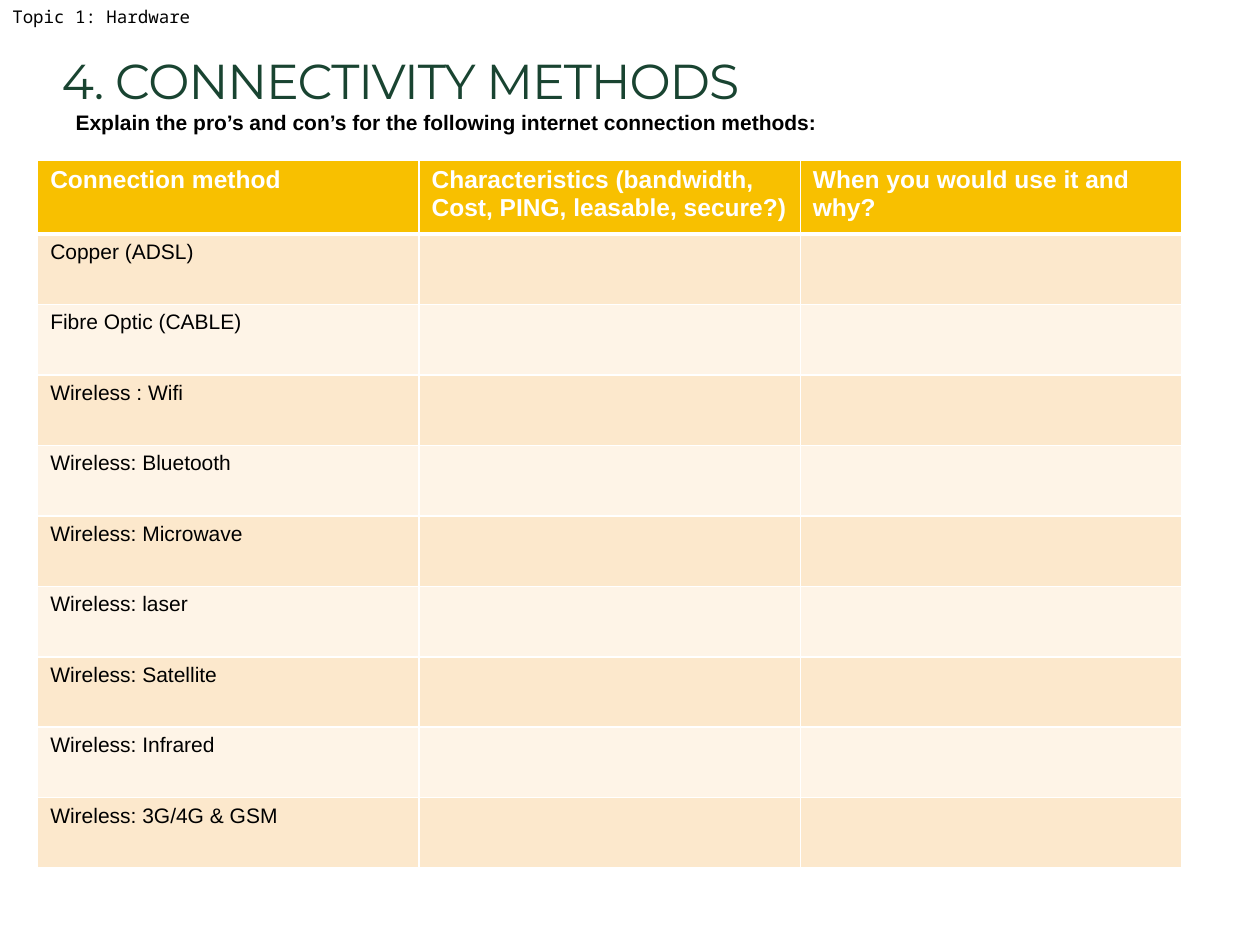
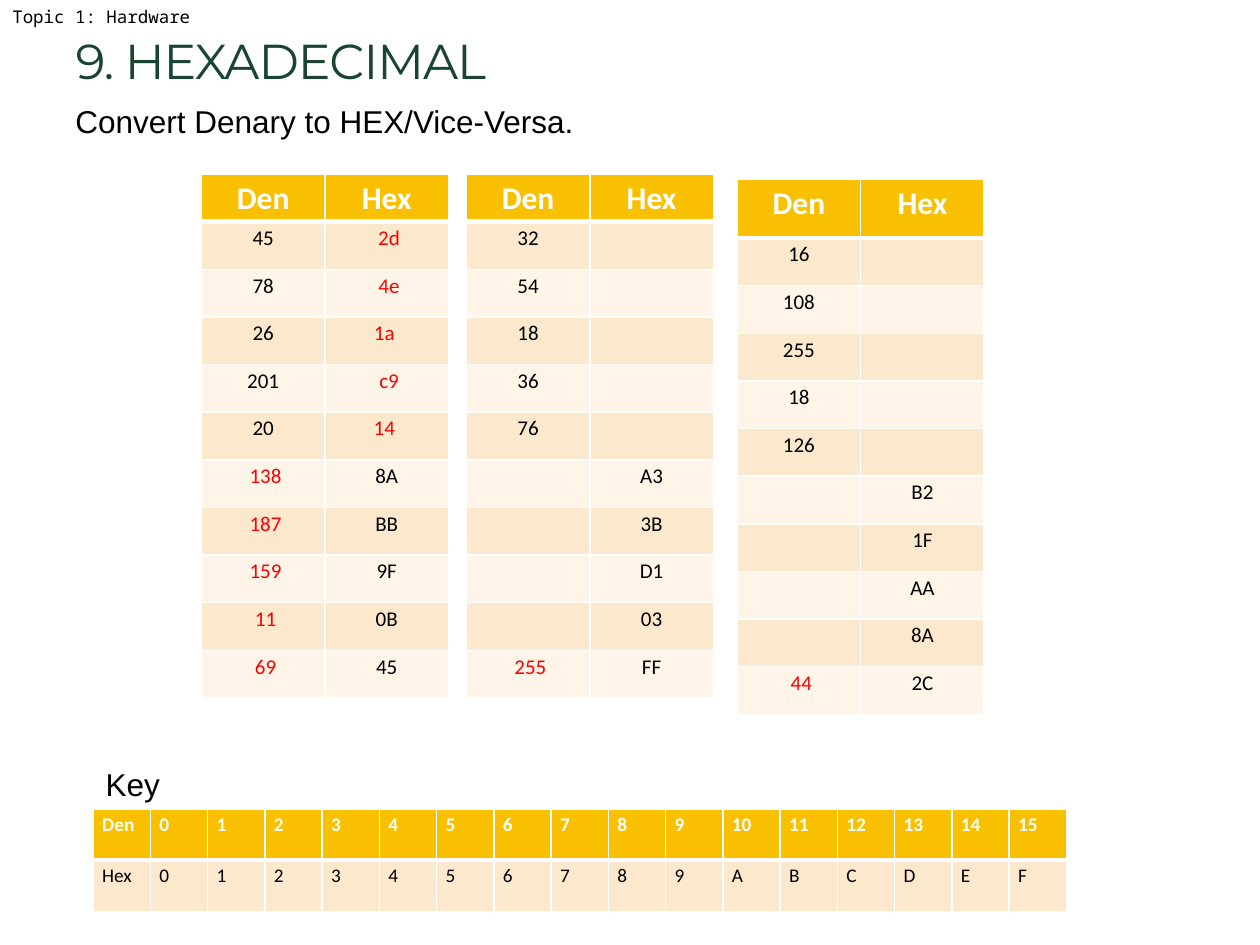
from dataclasses import dataclass

from lxml import etree
from pptx import Presentation
from pptx.dml.color import RGBColor
from pptx.enum import text
from pptx.oxml.ns import qn
from pptx.util import Cm, Pt


@dataclass(frozen=True)
class Theme:
    green: str = "194431"
    gold: str = "F8C000"
    bands: tuple = ("FCE8CC", "FEF4E7")
    white: str = "FFFFFF"
    black: str = "000000"
    red: str = "FF0000"
    title_font: str = "Montserrat"
    body_font: str = "Arial"
    table_font: str = "Calibri"
    header_font: str = "Noto Sans Mono"
    title_size: int = 28
    label_size: int = 18
    body_size: int = 12
    header_size: int = 10


@dataclass(frozen=True)
class TableLook:
    font: str
    head_size: int
    cell_size: int
    align: text.PP_ALIGN = text.PP_ALIGN.LEFT
    compact: bool = True


THEME = Theme()
METHOD_LOOK = TableLook(THEME.body_font, 14, THEME.body_size, compact=False)
CONVERSION_LOOK = TableLook(THEME.table_font, THEME.label_size, THEME.body_size, text.PP_ALIGN.CENTER)
KEY_LOOK = TableLook(THEME.table_font, 11, 11)

METHOD_HEADINGS = (
    "Connection method",
    "Characteristics (bandwidth, Cost, PING, leasable, secure?)",
    "When you would use it and why?",
)
METHODS = (
    "Copper (ADSL)",
    "Fibre Optic (CABLE)",
    "Wireless : Wifi",
    "Wireless: Bluetooth",
    "Wireless: Microwave",
    "Wireless: laser",
    "Wireless: Satellite",
    "Wireless: Infrared",
    "Wireless: 3G/4G & GSM",
)
CONVERSIONS = (
    (4.06, 3.51, 0.96, (
        ("45", " 2d"), ("78", " 4e"), ("26", "1a "), ("201", " c9"), ("20", "14 "),
        (" 138", "8A"), (" 187", "BB"), (" 159", "9F"), (" 11", "0B"), (" 69", "45"),
    )),
    (9.4, 3.51, 0.96, (
        ("32", ""), ("54", ""), ("18", ""), ("36", ""), ("76", ""),
        ("", "A3"), ("", "3B"), ("", "D1"), ("", "03"), (" 255", "FF"),
    )),
    (14.86, 3.61, 1.19, (
        ("16", ""), ("108", ""), ("255", ""), ("18", ""), ("126", ""),
        ("", "B2"), ("", "1F"), ("", "AA"), ("", "8A"), (" 44", "2C"),
    )),
)


def style_text(para, font, size, color, bold=False):
    for span in para.runs:
        span.font.name = font
        span.font.size = Pt(size)
        span.font.bold = bold
        span.font.color.rgb = RGBColor.from_string(color)


def place(box, left, top, width, height):
    box.left, box.top, box.width, box.height = map(Cm, (left, top, width, height))


def add_title(page, words, left, top):
    box = page.shapes.title
    place(box, left, top, 16.08, 3.4)
    frame = box.text_frame
    frame.text = words
    frame.auto_size = text.MSO_AUTO_SIZE.NONE
    frame.vertical_anchor = text.MSO_ANCHOR.BOTTOM
    para = frame.paragraphs[0]
    para.alignment = text.PP_ALIGN.LEFT
    style_text(para, THEME.title_font, THEME.title_size, THEME.green)
    for span in para.runs:
        span.font._element.set("spc", "-60")


def add_instruction(page, words):
    box = page.placeholders[1]
    place(box, 1.27, 2.08, 22.43, 12.14)
    frame = box.text_frame
    frame.text = words
    frame.auto_size = text.MSO_AUTO_SIZE.NONE
    para = frame.paragraphs[0]
    properties = para._p.get_or_add_pPr()
    properties.set("marL", "0")
    properties.set("indent", "0")
    etree.SubElement(properties, qn("a:buNone"))
    para.space_before = Pt(0)
    para.space_after = Pt(6)
    style_text(para, THEME.body_font, THEME.body_size, THEME.black, bold=True)


def add_label(page, words, left, top, width, height, font=THEME.body_font, size=THEME.label_size):
    box = page.shapes.add_textbox(Cm(left), Cm(top), Cm(width), Cm(height))
    frame = box.text_frame
    frame.text = words
    frame.word_wrap = False
    frame.auto_size = text.MSO_AUTO_SIZE.SHAPE_TO_FIT_TEXT
    style_text(frame.paragraphs[0], font, size, THEME.black)
    return box


def add_master_header(deck, page):
    box = add_label(page, "Topic 1: Hardware", 0, 0, 4.14, 0.69, THEME.header_font, THEME.header_size)
    deck.slide_master.shapes.element.append(box.element)


def set_borders(cell, row):
    widths = {"L": 1, "R": 1, "T": 3 if row == 1 else 1, "B": 3 if row == 0 else 1}
    properties = cell._tc.get_or_add_tcPr()
    for index, (side, width) in enumerate(widths.items()):
        line = etree.Element(qn(f"a:ln{side}"), w=str(Pt(width)))
        fill = etree.SubElement(line, qn("a:solidFill"))
        etree.SubElement(fill, qn("a:srgbClr"), val=THEME.white)
        properties.insert(index, line)


def fill_cell(cell, words, row, look):
    is_head = row == 0
    is_answer = words != words.strip()
    cell.fill.solid()
    cell.fill.fore_color.rgb = RGBColor.from_string(THEME.gold if is_head else THEME.bands[(row - 1) % 2])
    set_borders(cell, row)
    cell.text_frame.text = words
    para = cell.text_frame.paragraphs[0]
    para.alignment = look.align
    if look.compact:
        cell.margin_left = cell.margin_right = Cm(0.18)
        cell.margin_top = cell.margin_bottom = 0
        para.line_spacing = 1.15
    color = THEME.white if is_head else THEME.red if is_answer else THEME.black
    style_text(para, look.font, look.head_size if is_head else look.cell_size, color, is_head)


def add_grid(page, rows, left, top, width, head_height, row_height, look):
    heights = [head_height] + [row_height] * (len(rows) - 1)
    column_count = len(rows[0])
    grid = page.shapes.add_table(
        len(rows), column_count, Cm(left), Cm(top), Cm(width), Cm(sum(heights))
    ).table
    grid.first_row = grid.horz_banding = False
    for column in grid.columns:
        column.width = Cm(width / column_count)
    for row, (values, height) in enumerate(zip(rows, heights)):
        grid.rows[row].height = Cm(height)
        for column, words in enumerate(values):
            fill_cell(grid.cell(row, column), words, row, look)


def add_connectivity_page(deck):
    page = deck.slides.add_slide(deck.slide_layouts.get_by_name("Title and Content"))
    add_title(page, "4. CONNECTIVITY METHODS", 0.99, -1.07)
    add_instruction(page, "Explain the pro’s and con’s for the following internet connection methods:")
    rows = [METHOD_HEADINGS] + [(method, "", "") for method in METHODS]
    add_grid(page, rows, 0.76, 3.23, 23.06, 1.49, 1.42, METHOD_LOOK)
    return page


def add_hexadecimal_page(deck):
    page = deck.slides.add_slide(deck.slide_layouts.get_by_name("Title Only"))
    add_title(page, "9. HEXADECIMAL", 1.27, -1.47)
    add_label(page, "Convert Denary to HEX/Vice-Versa.", 1.27, 1.93, 10.67, 1.02)
    for left, top, head_height, pairs in CONVERSIONS:
        add_grid(page, (("Den", "Hex"),) + pairs, left, top, 4.98, head_height, 0.96, CONVERSION_LOOK)
    key_rows = (
        ["Den"] + [str(number) for number in range(16)],
        ["Hex"] + [f"{number:X}" for number in range(16)],
    )
    add_grid(page, key_rows, 1.88, 16.31, 19.63, 1.03, 1.03, KEY_LOOK)
    add_label(page, "Key", 1.88, 15.29, 1.63, 1.02)


def main():
    deck = Presentation()
    deck.slide_width, deck.slide_height = Cm(25.4), Cm(19.05)
    add_master_header(deck, add_connectivity_page(deck))
    add_hexadecimal_page(deck)
    deck.save("out.pptx")


if __name__ == "__main__":
    main()
